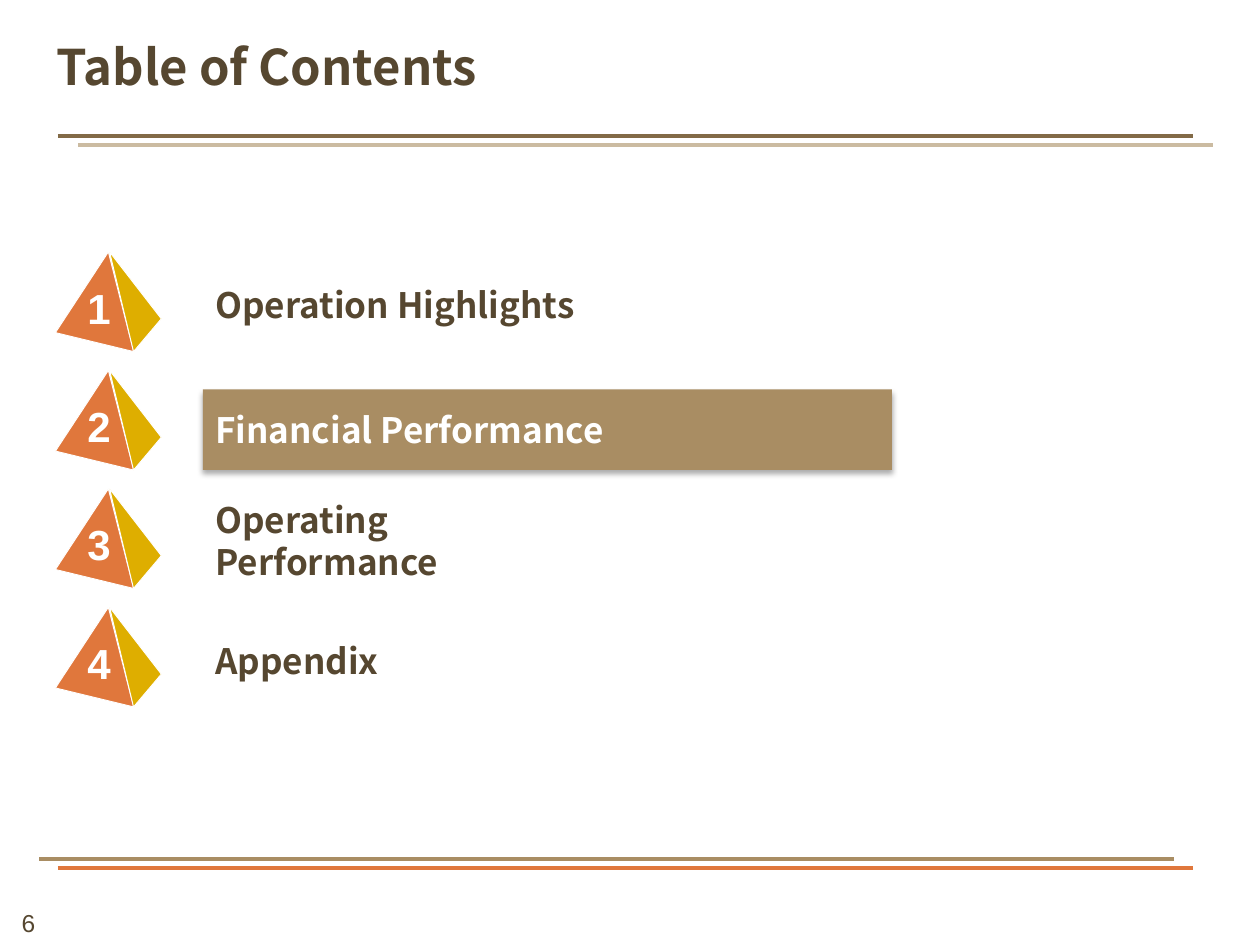
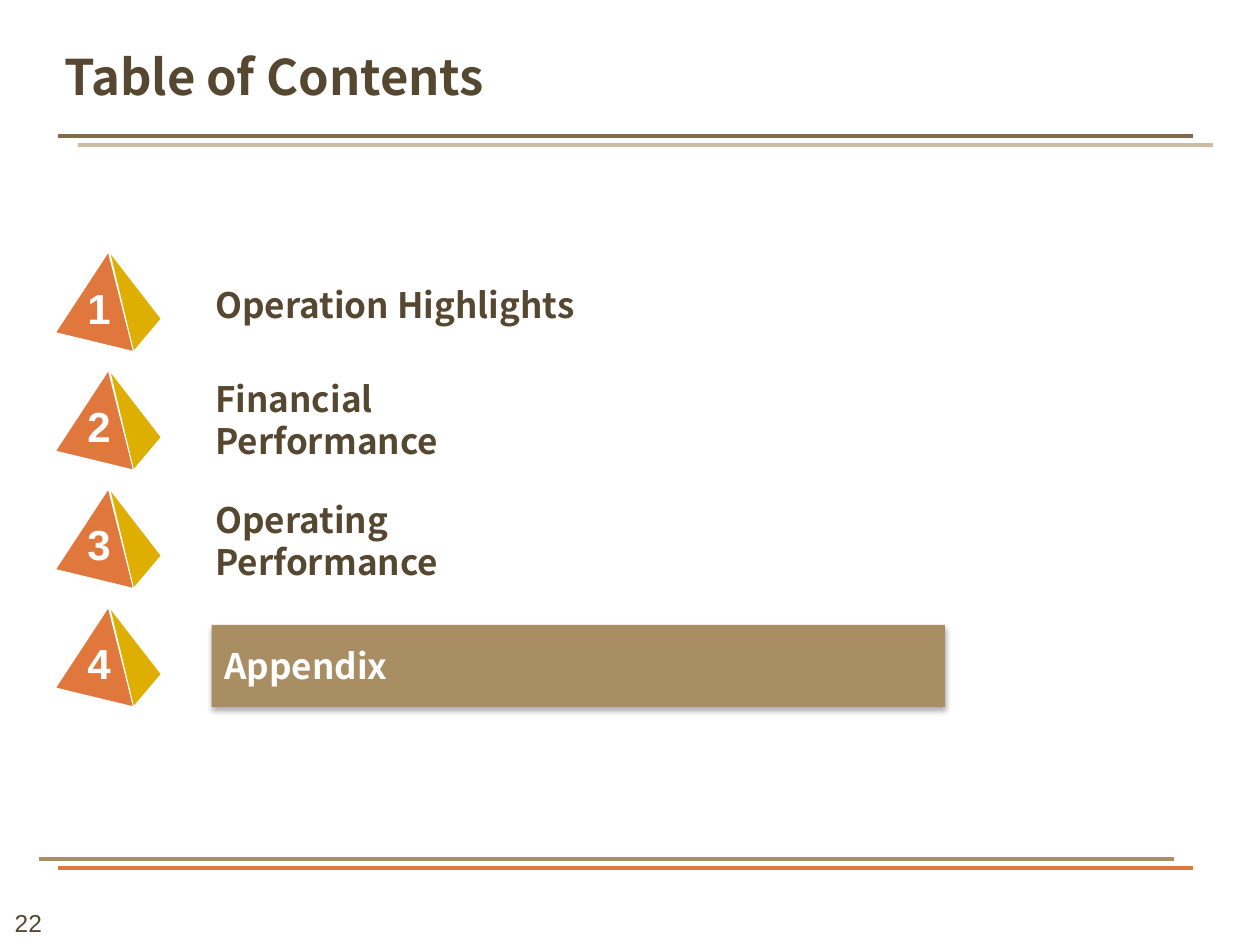
from dataclasses import dataclass

from lxml import etree
from pptx import Presentation
from pptx.dml.color import RGBColor
from pptx.enum.shapes import MSO_CONNECTOR, MSO_SHAPE
from pptx.enum.text import MSO_ANCHOR, PP_ALIGN
from pptx.oxml.ns import qn
from pptx.util import Pt

STRAIGHT = MSO_CONNECTOR.STRAIGHT
RECTANGLE = MSO_SHAPE.RECTANGLE
TOP, MIDDLE, BOTTOM = MSO_ANCHOR.TOP, MSO_ANCHOR.MIDDLE, MSO_ANCHOR.BOTTOM
LEFT, CENTER = PP_ALIGN.LEFT, PP_ALIGN.CENTER

TITLE = "Table of Contents"
SECTIONS = [
    ("Operation Highlights", (115.92, 149.76, 238.32, 48.96)),
    ("Financial Performance", (115.92, 216.72, 174.24, 46.08)),
    ("Operating Performance", (115.92, 285.84, 174.24, 46.08)),
    ("Appendix", (115.92, 354.24, 174.24, 46.08)),
]
AGENDAS = [
    {"number": "6", "current": 1, "title_at": (32.4, 18),
     "bar": (115.92, 222.48, 393.84, 46.08)},
    {"number": "22", "current": 3, "title_at": (36.72, 23.76),
     "bar": (120.96, 357.12, 419.04, 46.8)},
]


@dataclass(frozen=True)
class Theme:
    text: str = "564730"
    white: str = "FFFFFF"
    orange: str = "E0773C"
    gold: str = "DEAE00"
    tan: str = "A98D63"
    sand: str = "CBBBA1"
    brown: str = "826A47"
    heading_font: str = "Noto Sans CJK SC"
    number_font: str = "Arial"
    title_size: float = 28
    section_size: float = 20
    badge_size: float = 24
    footer_size: float = 14
    rule_width: float = 2.25
    edge_width: float = 0.5


THEME = Theme()
RULE_LENGTH = 648.72
RULES = [
    (33.12, 496.08, THEME.orange),
    (22.32, 491.04, THEME.tan),
    (44.64, 82.8, THEME.sand),
    (33.12, 77.76, THEME.brown),
]
PYRAMID_TOP, PYRAMID_PITCH = 144, 67.68
PYRAMID_FACES = [
    (THEME.orange, [(61.92, 0), (31.68, 46.08), (76.32, 56.88)]),
    (THEME.gold, [(62.64, 0), (92.16, 38.16), (76.32, 56.88)]),
]


def color(code):
    return RGBColor.from_string(code)


def points(values):
    return [Pt(value) for value in values]


def write(box, text, font, size, ink, bold=True, align=LEFT, anchor=MIDDLE,
          wrap=False, insets=(7.2, 3.6), spacing=None):
    frame = box.text_frame
    frame.text = text
    frame.word_wrap = wrap
    frame.vertical_anchor = anchor
    frame.margin_left = frame.margin_right = Pt(insets[0])
    frame.margin_top = frame.margin_bottom = Pt(insets[1])
    para = frame.paragraphs[0]
    para.alignment = align
    para.line_spacing = spacing
    span = para.runs[0]
    span.font.name = font
    span.font.size = Pt(size)
    span.font.bold = bold
    span.font.color.rgb = color(ink)


def add_rule(page, left, top, ink):
    rule = page.shapes.add_connector(STRAIGHT, *points((left, top, left + RULE_LENGTH, top)))
    rule.line.color.rgb = color(ink)
    rule.line.width = Pt(THEME.rule_width)
    etree.SubElement(rule._element.spPr, qn("a:effectLst"))


def add_frame(page, agenda):
    for rule in RULES:
        add_rule(page, *rule)
    title = page.shapes.add_textbox(*points((*agenda["title_at"], 677.52, 36.72)))
    write(title, TITLE, THEME.heading_font, THEME.title_size, THEME.text,
          anchor=BOTTOM, wrap=True, insets=(0, 0), spacing=Pt(40))
    footer = page.shapes.add_textbox(*points((0, 515.52, 32.4, 24.48)))
    write(footer, agenda["number"], THEME.number_font, THEME.footer_size, THEME.text,
          bold=False, align=CENTER, anchor=TOP, wrap=True, insets=(0, 3.6))


def add_pyramid(page, index):
    top = PYRAMID_TOP + index * PYRAMID_PITCH
    group = page.shapes.add_group_shape()
    for fill, corners in PYRAMID_FACES:
        apex, *others = [(Pt(x), Pt(top + y)) for x, y in corners]
        builder = group.shapes.build_freeform(*apex)
        builder.add_line_segments(others, close=True)
        face = builder.convert_to_shape()
        face.shadow.inherit = False
        face.fill.solid()
        face.fill.fore_color.rgb = color(fill)
        face.line.color.rgb = color(THEME.white)
        face.line.width = Pt(THEME.edge_width)
    badge = group.shapes.add_textbox(*points((49.68, top + 21.6, 13.68, 24.48)))
    write(badge, str(index + 1), THEME.number_font, THEME.badge_size, THEME.white,
          align=CENTER, insets=(0, 0), spacing=0.85)


def add_bar(page, place):
    bar = page.shapes.add_shape(RECTANGLE, *points(place))
    bar.fill.solid()
    bar.fill.fore_color.rgb = color(THEME.tan)
    bar.line.fill.background()
    effects = etree.SubElement(bar._element.spPr, qn("a:effectLst"))
    shadow = etree.SubElement(effects, qn("a:outerShdw"), blurRad=str(Pt(3.5)),
                              dist=str(Pt(2.2)), dir="5400000", rotWithShape="0")
    shade = etree.SubElement(shadow, qn("a:srgbClr"), val="000000")
    etree.SubElement(shade, qn("a:alpha"), val="32000")
    return bar


def add_section(page, index, agenda):
    label, place = SECTIONS[index]
    add_pyramid(page, index)
    if index == agenda["current"]:
        box, ink = add_bar(page, agenda["bar"]), THEME.white
    else:
        box, ink = page.shapes.add_textbox(*points(place)), THEME.text
    write(box, label, THEME.heading_font, THEME.section_size, ink)


def main():
    deck = Presentation()
    deck.slide_width, deck.slide_height = Pt(720), Pt(540)
    for agenda in AGENDAS:
        page = deck.slides.add_slide(deck.slide_layouts[6])
        add_frame(page, agenda)
        for index in range(len(SECTIONS)):
            add_section(page, index, agenda)
    deck.save("out.pptx")


if __name__ == "__main__":
    main()
